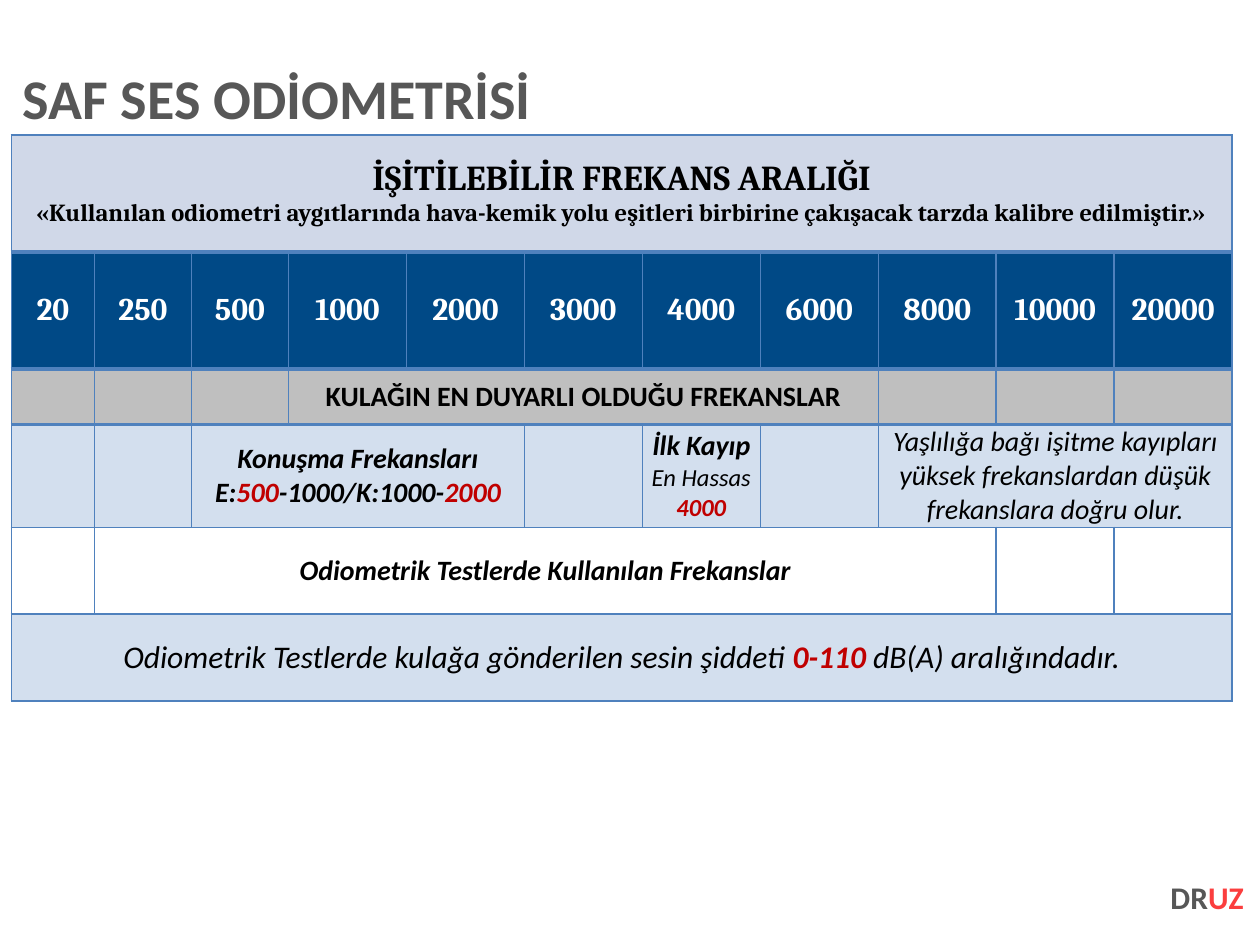
"""Build the pure-tone audiometry slide with its table of audible frequencies."""
from dataclasses import dataclass

from lxml import etree
from pptx import Presentation
from pptx.dml.color import RGBColor
from pptx.enum.text import MSO_ANCHOR, MSO_AUTO_SIZE, PP_ALIGN
from pptx.oxml.ns import qn
from pptx.util import Inches, Pt

LEFT, CENTER, RIGHT = PP_ALIGN.LEFT, PP_ALIGN.CENTER, PP_ALIGN.RIGHT
MIDDLE = MSO_ANCHOR.MIDDLE
NO_AUTOFIT = MSO_AUTO_SIZE.NONE

BLACK = RGBColor(0x00, 0x00, 0x00)
WHITE = RGBColor(0xFF, 0xFF, 0xFF)
GRAY = RGBColor(0x57, 0x57, 0x57)
RED = RGBColor(0xC0, 0x00, 0x00)
BRIGHT_RED = RGBColor(0xFB, 0x3E, 0x3E)
BORDER_BLUE = RGBColor(0x4F, 0x81, 0xBD)
HEADING_FILL = RGBColor(0xD0, 0xD8, 0xE8)
NAVY = RGBColor(0x00, 0x49, 0x86)
SILVER = RGBColor(0xBF, 0xBF, 0xBF)
PALE_BLUE = RGBColor(0xD3, 0xDF, 0xEE)

THIN, THICK = 1, 2.25
FREQUENCIES = (20, 250, 500, 1000, 2000, 3000, 4000, 6000, 8000, 10000, 20000)
TABLE_WIDTH = 9.69
NARROW_COLUMNS = [0.66, 0.77, 0.77]
WIDE_COUNT = len(FREQUENCIES) - len(NARROW_COLUMNS)
COLUMN_WIDTHS = NARROW_COLUMNS + [(TABLE_WIDTH - sum(NARROW_COLUMNS)) / WIDE_COUNT] * WIDE_COUNT


@dataclass
class Words:
    text: str
    size: float = 16
    color: RGBColor = BLACK
    bold: bool = True
    italic: bool = False
    font: str = "Calibri"


@dataclass
class Entry:
    column: int
    span: int
    lines: list[list[Words]]


@dataclass
class Band:
    height: float
    fill: RGBColor | None
    top: float
    bottom: float
    entries: list[Entry]


def italic(text: str, size: float = 16, color: RGBColor = BLACK, bold: bool = True) -> Words:
    return Words(text, size, color, bold, True)


def cambria(text: str, size: float, color: RGBColor = BLACK) -> Words:
    return Words(text, size, color, font="Cambria")


def write_lines(frame, lines: list[list[Words]], align: PP_ALIGN) -> None:
    for index, line in enumerate(lines):
        paragraph = frame.add_paragraph() if index else frame.paragraphs[0]
        paragraph.alignment = align
        for words in line:
            run = paragraph.add_run()
            run.text = words.text
            font = run.font
            font.name, font.size = words.font, Pt(words.size)
            font.bold, font.italic = words.bold, words.italic
            font.color.rgb = words.color


def set_margins(frame, vertical: float) -> None:
    frame.margin_left = frame.margin_right = 0
    frame.margin_top = frame.margin_bottom = Inches(vertical)


def format_cell(cell, band: Band) -> None:
    properties = cell._tc.get_or_add_tcPr()
    edges = {"a:lnL": THIN, "a:lnR": THIN, "a:lnT": band.top, "a:lnB": band.bottom}
    for tag, width in edges.items():
        edge = etree.SubElement(properties, qn(tag), w=str(Pt(width)))
        fill = etree.SubElement(edge, qn("a:solidFill"))
        etree.SubElement(fill, qn("a:srgbClr"), val=str(BORDER_BLUE))
    if band.fill is None:
        cell.fill.background()
    else:
        cell.fill.solid()
        cell.fill.fore_color.rgb = band.fill
    cell.margin_left = cell.margin_right = Inches(0.07)
    cell.margin_top = cell.margin_bottom = 0
    cell.vertical_anchor = MIDDLE


def add_frequency_table(slide, bands: list[Band]) -> None:
    height = sum(band.height for band in bands)
    table = slide.shapes.add_table(
        len(bands), len(COLUMN_WIDTHS), Inches(0.09), Inches(1.07), Inches(TABLE_WIDTH), Inches(height)
    ).table
    table.first_row = table.horz_banding = False
    for column, width in zip(table.columns, COLUMN_WIDTHS):
        column.width = Inches(width)
    for index, band in enumerate(bands):
        table.rows[index].height = Inches(band.height)
        for cell in table.rows[index].cells:
            format_cell(cell, band)
        for entry in band.entries:
            cell = table.cell(index, entry.column)
            if entry.span > 1:
                cell.merge(table.cell(index, entry.column + entry.span - 1))
            write_lines(cell.text_frame, entry.lines, CENTER)


def add_title(slide) -> None:
    title = slide.shapes.title
    title.left, title.top = Inches(0.18), Inches(0.45)
    title.width, title.height = Inches(9.64), Inches(0.71)
    frame = title.text_frame
    frame.auto_size, frame.vertical_anchor = NO_AUTOFIT, MIDDLE
    set_margins(frame, 0.05)
    write_lines(frame, [[Words("SAF SES ODİOMETRİSİ", 32, GRAY)]], LEFT)
    frame.paragraphs[0].line_spacing = 0.9


def add_signature(slide) -> None:
    frame = slide.shapes.add_textbox(Inches(9.22), Inches(6.97), Inches(0.65), Inches(0.56)).text_frame
    frame.word_wrap = True
    set_margins(frame, 0)
    write_lines(frame, [[Words("DR", 18, GRAY), Words("UZ", 18, BRIGHT_RED)]], RIGHT)


def frequency_bands() -> list[Band]:
    heading = [
        [cambria("İŞİTİLEBİLİR FREKANS ARALIĞI", 20)],
        [cambria("«Kullanılan odiometri aygıtlarında hava-kemik yolu eşitleri birbirine "
                 "çakışacak tarzda kalibre edilmiştir.»", 14)],
    ]
    scale = [Entry(i, 1, [[cambria(str(hertz), 18, WHITE)]]) for i, hertz in enumerate(FREQUENCIES)]
    sensitive = [[Words("KULAĞIN EN DUYARLI OLDUĞU FREKANSLAR")]]
    speech = [
        [italic("Konuşma Frekansları")],
        [italic("E:"), italic("500", color=RED), italic("-1000/K:1000-"), italic("2000", color=RED)],
    ]
    first_loss = [
        [italic("İlk Kayıp")],
        [italic("En Hassas", 14, bold=False)],
        [italic("4000", 14, RED)],
    ]
    ageing = [[italic("Yaşlılığa bağı işitme kayıpları yüksek frekanslardan düşük "
                      "frekanslara doğru olur.", bold=False)]]
    tested = [[italic("Odiometrik Testlerde Kullanılan Frekanslar")]]
    intensity = [[
        italic("Odiometrik Testlerde kulağa gönderilen sesin şiddeti ", 18, bold=False),
        italic("0-110", 18, RED),
        italic(" dB(A) aralığındadır.", 18, bold=False),
    ]]
    return [
        Band(0.93, HEADING_FILL, THIN, THICK, [Entry(0, 11, heading)]),
        Band(0.93, NAVY, THICK, THICK, scale),
        Band(0.44, SILVER, THICK, THICK, [Entry(3, 5, sensitive)]),
        Band(0.69, PALE_BLUE, THICK, THIN,
             [Entry(2, 3, speech), Entry(6, 1, first_loss), Entry(8, 3, ageing)]),
        Band(0.69, None, THIN, THIN, [Entry(1, 8, tested)]),
        Band(0.69, PALE_BLUE, THIN, THIN, [Entry(0, 11, intensity)]),
    ]


def main() -> None:
    deck = Presentation()
    deck.slide_width, deck.slide_height = Inches(10), Inches(7.5)
    slide = deck.slides.add_slide(deck.slide_layouts.get_by_name("Title Only"))
    add_title(slide)
    add_frequency_table(slide, frequency_bands())
    add_signature(slide)
    deck.save("out.pptx")


if __name__ == "__main__":
    main()
